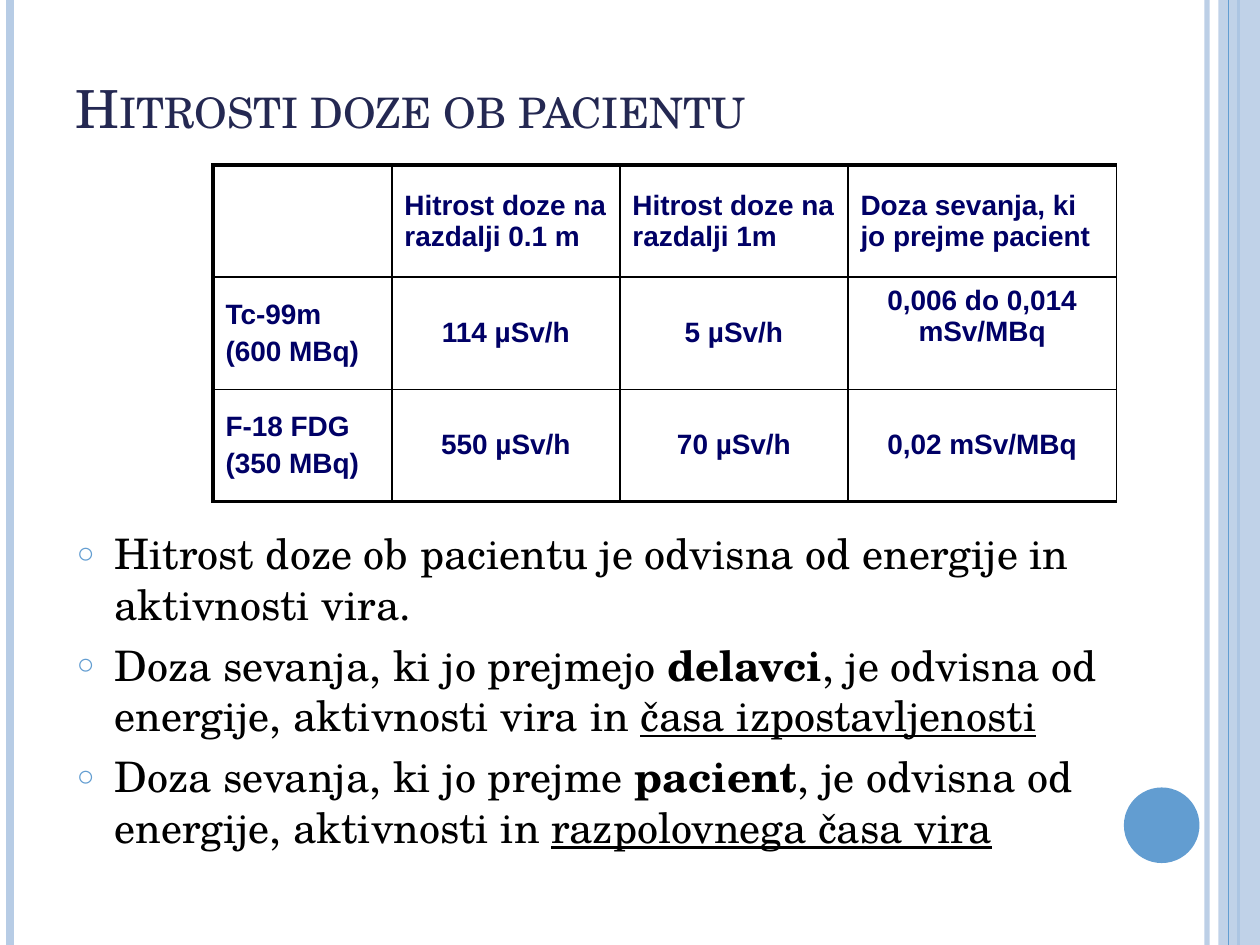
from lxml import etree
from pptx import Presentation
from pptx.dml.color import RGBColor
from pptx.enum.shapes import MSO_CONNECTOR, MSO_SHAPE
from pptx.enum.text import MSO_ANCHOR, MSO_AUTO_SIZE, PP_ALIGN
from pptx.oxml.ns import qn
from pptx.util import Inches, Pt

STRAIGHT = MSO_CONNECTOR.STRAIGHT
RECTANGLE, OVAL = MSO_SHAPE.RECTANGLE, MSO_SHAPE.OVAL
TOP, MIDDLE, BOTTOM = MSO_ANCHOR.TOP, MSO_ANCHOR.MIDDLE, MSO_ANCHOR.BOTTOM
LEFT, CENTER = PP_ALIGN.LEFT, PP_ALIGN.CENTER
NO_AUTOFIT = MSO_AUTO_SIZE.NONE

SERIF, SANS = "TeX Gyre Schola", "Arial"
BLUE, PALE, NAVY, TABLE_TEXT, BLACK = "629DD1", "B7CCE5", "242852", "000066", "000000"
THIN, THICK = 1, 2.25

STRIPES = [(9.58, PALE, 3, 93), (0.08, PALE, 4.5, 100), (9.83, BLUE, 1.5, 100)]
COLUMN_WIDTHS = [1.42, 1.81, 1.81, 2.13]
ROW_HEIGHT = 0.89
DOSE_ROWS = [
    ["", "Hitrost doze na razdalji 0.1 m", "Hitrost doze na razdalji 1m",
     "Doza sevanja, ki jo prejme pacient"],
    ["Tc-99m\n(600 MBq)", "114 µSv/h", "5 µSv/h", "0,006 do 0,014 mSv/MBq\v"],
    ["F-18 FDG\n(350 MBq)", "550 µSv/h", "70 µSv/h", "0,02 mSv/MBq"],
]
BULLETS = [
    [("Hitrost doze ob pacientu je odvisna od energije in aktivnosti vira.", "")],
    [("Doza sevanja, ki jo prejmejo ", ""), ("delavci", "bold"),
     (", je odvisna od energije, aktivnosti vira in ", ""),
     ("časa izpostavljenosti", "underline")],
    [("Doza sevanja, ki jo prejme", ""), (" pacient", "bold"),
     (", je odvisna od energije, aktivnosti in ", ""),
     ("razpolovnega časa vira", "underline")],
]


def rgb(color):
    return RGBColor.from_string(color)


def add_element(parent, tag, **attributes):
    return etree.SubElement(parent, qn(tag), attributes)


def set_opacity(element, percent):
    color = next(element.iter(qn("a:srgbClr")))
    add_element(color, "a:alpha", val=str(percent * 1000))


def style_span(span, font, size, color, bold=False):
    span.font.name = font
    span.font.size = Pt(size)
    span.font.color.rgb = rgb(color)
    span.font.bold = bold


def place(box, left, top, width, height):
    box.left, box.top = Inches(left), Inches(top)
    box.width, box.height = Inches(width), Inches(height)


def add_stripe(page, x, color, width, opacity):
    stripe = page.shapes.add_connector(STRAIGHT, Inches(x), 0, Inches(x), Inches(7.5))
    stripe.line.color.rgb = rgb(color)
    stripe.line.width = Pt(width)
    properties = stripe._element.spPr
    add_element(properties, "a:effectLst")
    if opacity < 100:
        set_opacity(properties, opacity)


def add_plain_shape(page, kind, bounds, color):
    shape = page.shapes.add_shape(kind, *map(Inches, bounds))
    shape.shadow.inherit = False
    shape.fill.solid()
    shape.fill.fore_color.rgb = rgb(color)
    shape.line.fill.background()
    return shape


def add_decoration(page):
    for stripe in STRIPES:
        add_stripe(page, *stripe)
    band = add_plain_shape(page, RECTANGLE, (9.67, 0, 0.33, 7.5), PALE)
    set_opacity(band._element.spPr, 87)
    add_stripe(page, 9.75, BLUE, 0.75, 100)
    add_plain_shape(page, OVAL, (8.92, 6.25, 0.6, 0.6), BLUE)


def fill_title(title):
    place(title, 0.5, 0.3, 8.17, 0.85)
    frame = title.text_frame
    frame.text = "Hitrosti doze ob pacientu"
    frame.auto_size = NO_AUTOFIT
    frame.vertical_anchor = BOTTOM
    para = frame.paragraphs[0]
    para.alignment = LEFT
    span = para.runs[0]
    style_span(span, SERIF, 30, NAVY)
    span.font._element.set("cap", "small")


def set_borders(cell, widths):
    properties = cell._tc.get_or_add_tcPr()
    for index, (side, width) in enumerate(zip("LRTB", widths)):
        border = etree.Element(qn(f"a:ln{side}"), w=str(Pt(width)))
        fill = add_element(border, "a:solidFill")
        add_element(fill, "a:srgbClr", val=BLACK)
        properties.insert(index, border)


def fill_cell(cell, text, alignment):
    cell.fill.background()
    cell.vertical_anchor = MIDDLE
    cell.text_frame.text = text
    for para in cell.text_frame.paragraphs:
        para.alignment = alignment
        para.space_before = Pt(3.2)
        for span in para.runs:
            style_span(span, SANS, 16, TABLE_TEXT, True)
        add_element(para._p, "a:endParaRPr", sz="1600")


def add_dose_table(page):
    row_count, column_count = len(DOSE_ROWS), len(COLUMN_WIDTHS)
    frame = page.shapes.add_table(
        row_count, column_count, Inches(1.69), Inches(1.31),
        Inches(sum(COLUMN_WIDTHS)), Inches(ROW_HEIGHT * row_count))
    table = frame.table
    table.first_row = table.horz_banding = False
    for column, width in zip(table.columns, COLUMN_WIDTHS):
        column.width = Inches(width)
    for i, texts in enumerate(DOSE_ROWS):
        table.rows[i].height = Inches(ROW_HEIGHT)
        for j, text in enumerate(texts):
            cell = table.cell(i, j)
            fill_cell(cell, text, CENTER if i and j else LEFT)
            set_borders(cell, (
                THIN if j else THICK, THIN,
                THIN if i else THICK,
                THICK if i == row_count - 1 else THIN))


def set_bullet(para):
    properties = para._p.get_or_add_pPr()
    properties.set("marL", str(Inches(0.3)))
    properties.set("indent", str(Inches(-0.3)))
    color = add_element(properties, "a:buClr")
    add_element(color, "a:srgbClr", val=BLUE)
    add_element(properties, "a:buSzPct", val="70000")
    add_element(properties, "a:buChar", char="○")


def fill_body(body):
    place(body, 0.51, 4.14, 8.74, 2.99)
    frame = body.text_frame
    frame.auto_size = NO_AUTOFIT
    frame.vertical_anchor = TOP
    frame.text = "\n".join("" for _ in BULLETS)
    for para, pieces in zip(frame.paragraphs, BULLETS):
        para.space_before = Pt(6)
        set_bullet(para)
        for text, emphasis in pieces:
            span = para.add_run()
            span.text = text
            style_span(span, SERIF, 24, BLACK, emphasis == "bold")
            span.font.underline = emphasis == "underline"


def main():
    deck = Presentation()
    deck.slide_width, deck.slide_height = Inches(10), Inches(7.5)
    page = deck.slides.add_slide(deck.slide_layouts[1])
    add_decoration(page)
    fill_title(page.shapes.title)
    add_dose_table(page)
    fill_body(page.placeholders[1])
    deck.save("out.pptx")


if __name__ == "__main__":
    main()
